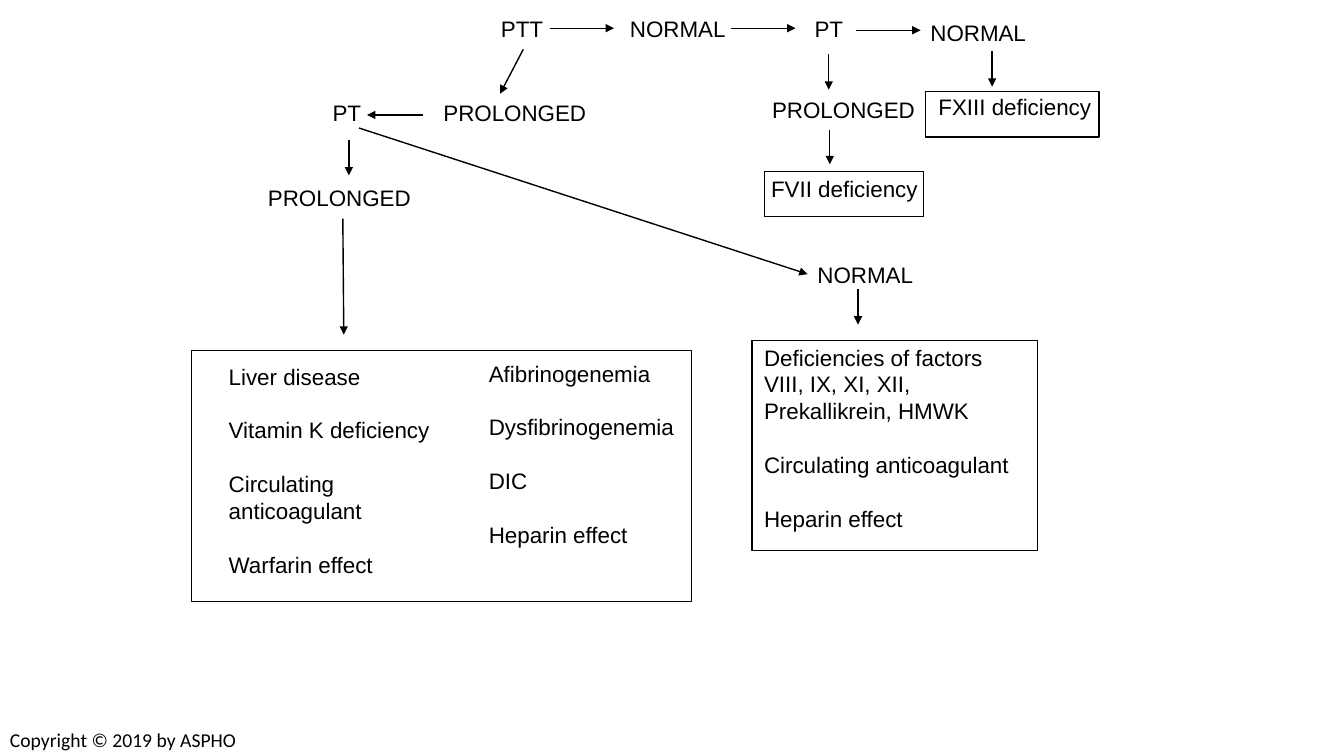
from lxml import etree
from pptx import Presentation
from pptx.dml.color import RGBColor
from pptx.enum.shapes import MSO_CONNECTOR, MSO_SHAPE
from pptx.oxml.ns import qn
from pptx.util import Inches, Pt

BLACK = RGBColor(0, 0, 0)
STRAIGHT = MSO_CONNECTOR.STRAIGHT
RECTANGLE = MSO_SHAPE.RECTANGLE
LINE_PITCH = Pt(19.2)

deck = Presentation()
deck.slide_width, deck.slide_height = Inches(13.33), Inches(7.5)
page = deck.slides.add_slide(deck.slide_layouts[6])


def add_text(lines, left, top, width, height, wrap=False):
    box = page.shapes.add_textbox(Inches(left), Inches(top), Inches(width), Inches(height))
    frame = box.text_frame
    frame.word_wrap = wrap
    frame.text = "\n".join(lines)
    for index, para in enumerate(frame.paragraphs):
        para.line_spacing = LINE_PITCH
        if index:
            para.space_before = LINE_PITCH
        for span in para.runs:
            span.font.name = "Arial"
            span.font.size = Pt(16)
            span.font.color.rgb = BLACK
    return box


def add_arrow(x1, y1, x2, y2):
    arrow = page.shapes.add_connector(STRAIGHT, Inches(x1), Inches(y1), Inches(x2), Inches(y2))
    arrow.line.color.rgb = BLACK
    arrow.line.width = Pt(1)
    etree.SubElement(arrow.line._get_or_add_ln(), qn("a:tailEnd"), type="triangle")
    etree.SubElement(arrow._element.spPr, qn("a:effectLst"))
    return arrow


# Frames around the diagnoses
for left, top, width, height in [
    (1.9, 3.48, 4.96, 2.49),
    (7.46, 3.38, 2.83, 2.08),
    (7.58, 1.7, 1.58, 0.45),
    (9.18, 0.91, 1.72, 0.45),
]:
    frame_box = page.shapes.add_shape(
        RECTANGLE, Inches(left), Inches(top), Inches(width), Inches(height))
    frame_box.shadow.inherit = False
    frame_box.fill.background()
    frame_box.line.color.rgb = BLACK
    frame_box.line.width = Pt(1)

# Test results and single diagnoses
for label, left, top, width in [
    ("PTT", 4.87, 0.1, 0.62),
    ("PROLONGED", 4.3, 0.93, 1.63),
    ("PT", 3.2, 0.93, 0.49),
    ("PROLONGED", 2.56, 1.78, 1.63),
    ("NORMAL", 6.15, 0.1, 1.16),
    ("PT", 7.98, 0.1, 0.49),
    ("PROLONGED", 7.56, 0.9, 1.63),
    ("FVII deficiency", 7.55, 1.69, 1.67),
    ("NORMAL", 9.13, 0.14, 1.16),
    ("FXIII deficiency", 9.21, 0.88, 1.73),
]:
    add_text([label], left, top, width, 0.37)
normal_pt = add_text(["NORMAL"], 8.01, 2.54, 1.16, 0.36)

# Lists of diagnoses
add_text(["Liver disease", "Vitamin K deficiency", "Circulating anticoagulant",
          "Warfarin effect"], 2.17, 3.55, 2.38, 2.52, wrap=True)
add_text(["Afibrinogenemia", "Dysfibrinogenemia", "DIC", "Heparin effect"],
         4.75, 3.52, 2.05, 1.98, wrap=True)
add_text(["Deficiencies of factors VIII, IX, XI, XII, Prekallikrein, HMWK",
          "Circulating anticoagulant", "Heparin effect"],
         7.48, 3.36, 2.81, 2.52, wrap=True)

# Arrows between the steps
for ends in [
    (5.19, 0.49, 4.96, 0.93),
    (4.2, 1.14, 3.64, 1.14),
    (3.46, 1.39, 3.46, 1.74),
    (3.4, 2.17, 3.41, 3.32),
    (8.51, 2.87, 8.51, 3.22),
    (5.45, 0.28, 6.09, 0.28),
    (7.25, 0.28, 7.89, 0.28),
    (8.22, 0.54, 8.22, 0.89),
    (8.23, 1.29, 8.23, 1.63),
    (8.49, 0.3, 9.13, 0.3),
    (9.84, 0.51, 9.84, 0.86),
]:
    add_arrow(*ends)
add_arrow(3.56, 1.27, 8.01, 2.72).end_connect(normal_pt, 1)

# Copyright line
footer = add_text(["Copyright © 2019 by ASPHO"], 0, 7.17, 2.48, 0.34, wrap=True)
footer_para = footer.text_frame.paragraphs[0]
footer_para.line_spacing = 1.0
footer_para.runs[0].font.name = "Calibri"
footer_para.runs[0].font.size = Pt(14)

deck.save("out.pptx")
